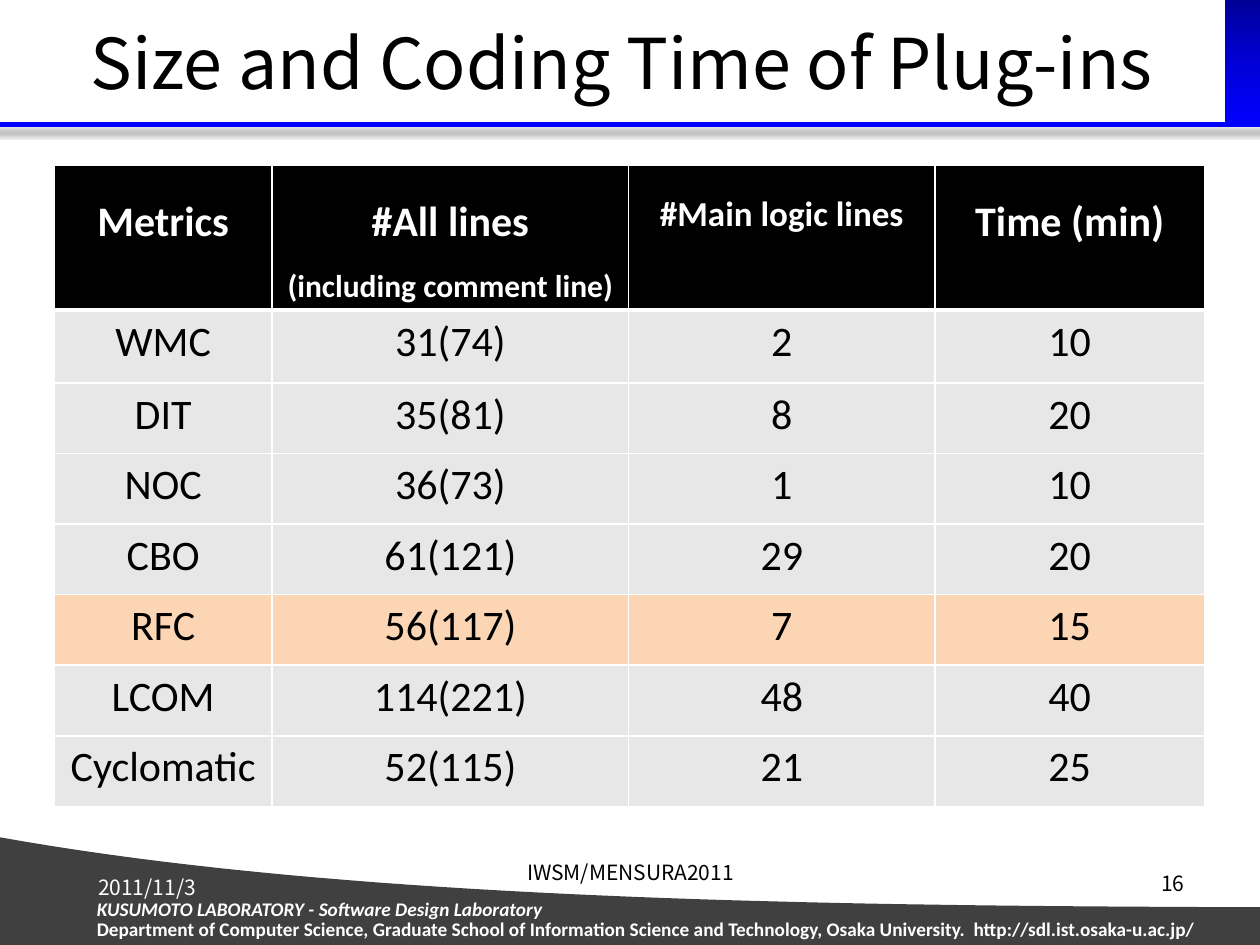
from copy import deepcopy

from lxml import etree
from pptx import Presentation
from pptx import util as u
from pptx.dml import color as c
from pptx.enum import shapes, text
from pptx.oxml import ns

BODY_FONT, TITLE_FONT = "Calibri", "Noto Sans CJK JP"
BLACK, WHITE, BLUE = "000000", "FFFFFF", "0000FF"
ALIGN, ANCHOR = text.PP_ALIGN, text.MSO_ANCHOR


def rgb(value):
    return c.RGBColor.from_string(value)


def style(paragraph, size, color, font, align=ALIGN.LEFT, bold=False, italic=False):
    paragraph.alignment = align
    for run in paragraph.runs:
        run.font.size, run.font.name = u.Pt(size), font
        run.font.bold, run.font.italic = bold, italic
        run.font.color.rgb = rgb(color)


presentation = Presentation()
presentation.slide_width, presentation.slide_height = u.Inches(10), u.Inches(7.5)
slide = presentation.slides.add_slide(presentation.slide_layouts[6])

# Footer wave: points along a cubic curve, closed along the bottom
start, control_1, control_2, end = (-0.03, 6.64), (2.79, 7.15), (6.64, 7.19), (10.02, 7.2)
wave = []
for step in range(41):
    t = step / 40
    weights = ((1 - t) ** 3, 3 * t * (1 - t) ** 2, 3 * t ** 2 * (1 - t), t ** 3)
    wave.append([u.Inches(sum(w * p for w, p in zip(weights, axis)))
                 for axis in zip(start, control_1, control_2, end)])
builder = slide.shapes.build_freeform(*wave[0], scale=1.0)
corners = [(u.Inches(x), u.Inches(y)) for x, y in ((10.02, 7.51), (-0.03, 7.53))]
builder.add_line_segments(wave[1:] + corners, close=True)
footer = builder.convert_to_shape()
footer.shadow.inherit = False
footer.fill.solid()
footer.fill.fore_color.rgb = rgb("404040")
footer.line.fill.background()

# Blue corner block and header rule
corner = slide.shapes.add_shape(shapes.MSO_SHAPE.RECTANGLE, u.Inches(9.72), 0,
                                u.Inches(0.28), u.Inches(0.99))
corner.shadow.inherit = False
corner.line.fill.background()
corner.fill.gradient()
corner.fill.gradient_angle = 270
stop_list = corner._element.spPr.find(".//" + ns.qn("a:gsLst"))
stop_list.append(deepcopy(stop_list[0]))
for stop, (position, color) in zip(corner.fill.gradient_stops,
                                   ((0, "000097"), (0.5, "0000D7"), (1, BLUE))):
    stop.position, stop.color.rgb = position, rgb(color)

rule = slide.shapes.add_connector(shapes.MSO_CONNECTOR.STRAIGHT, u.Inches(-0.12),
                                  u.Inches(0.99), u.Inches(10.12), u.Inches(0.99))
rule.line.color.rgb = rgb(BLUE)
rule.line.width = u.Pt(3)
effects = etree.SubElement(rule._element.spPr, ns.qn("a:effectLst"))
shadow = etree.SubElement(effects, ns.qn("a:outerShdw"), blurRad=str(u.Pt(4)),
                          dist=str(u.Pt(3)), dir="5400000", rotWithShape="0")
shadow_color = etree.SubElement(shadow, ns.qn("a:srgbClr"), val=BLACK)
etree.SubElement(shadow_color, ns.qn("a:alpha"), val="40000")

# Title and footer texts: words, box, anchor, wrap, line spacing, style
labels = [
    ("Department of Computer Science, Graduate School of Information Science and Technology, "
     "Osaka University.  http://sdl.ist.osaka-u.ac.jp/",
     (0.67, 7.22, 9.33, 0.29), ANCHOR.BOTTOM, True, None,
     (11, WHITE, BODY_FONT, ALIGN.LEFT, True)),
    ("KUSUMOTO LABORATORY - Software Design Laboratory",
     (0.67, 7.12, 3.79, 0.25), ANCHOR.TOP, False, u.Pt(10),
     (11, WHITE, BODY_FONT, ALIGN.LEFT, True, True)),
    ("Size and Coding Time of Plug-ins", (0.25, 0.05, 9.37, 0.87), ANCHOR.MIDDLE, True, None,
     (40, BLACK, TITLE_FONT, ALIGN.CENTER)),
    ("2011/11/3", (0.68, 6.89, 1.85, 0.24), ANCHOR.TOP, True, None,
     (12, WHITE, TITLE_FONT)),
    ("IWSM/MENSURA2011", (2.52, 6.72, 4.97, 0.41), ANCHOR.MIDDLE, True, None,
     (12, BLACK, TITLE_FONT, ALIGN.CENTER)),
    ("16", (7.6, 6.73, 1.9, 0.43), ANCHOR.BOTTOM, True, None,
     (12, BLACK, TITLE_FONT, ALIGN.RIGHT)),
]
for words, box, anchor, wrap, spacing, look in labels:
    frame = slide.shapes.add_textbox(*map(u.Inches, box)).text_frame
    frame.text = words
    frame.word_wrap, frame.vertical_anchor = wrap, anchor
    frame.paragraphs[0].line_spacing = spacing
    style(frame.paragraphs[0], *look)

# Metrics table
rows = [
    ("Metrics", "#All lines\n(including comment line)", "#Main logic lines", "Time (min)"),
    ("WMC", "31(74)", "2", "10"),
    ("DIT", "35(81)", "8", "20"),
    ("NOC", "36(73)", "1", "10"),
    ("CBO", "61(121)", "29", "20"),
    ("RFC", "56(117)", "7", "15"),
    ("LCOM", "114(221)", "48", "40"),
    ("Cyclomatic", "52(115)", "21", "25"),
]
small_headings = {"(including comment line)": 18, "#Main logic lines": 20}
table = slide.shapes.add_table(len(rows), 4, u.Inches(0.43), u.Inches(1.31),
                               u.Inches(9.13), u.Inches(5.08)).table
for column, width in zip(table.columns, (1.73, 2.83, 2.43, 2.14)):
    column.width = u.Inches(width)
for row, height in zip(table.rows, [1.14, 0.58] + [0.56] * 6):
    row.height = u.Inches(height)

for row_index, values in enumerate(rows):
    heading = row_index == 0
    fill = BLACK if heading else "FCD5B5" if values[0] == "RFC" else "E7E7E7"
    for column_index, value in enumerate(values):
        cell = table.cell(row_index, column_index)
        cell.text_frame.text = value
        for paragraph in cell.text_frame.paragraphs:
            style(paragraph, small_headings.get(paragraph.text, 24),
                  WHITE if heading else BLACK, BODY_FONT, ALIGN.CENTER, heading)
            if heading:
                paragraph.line_spacing = 1.5
        properties = cell._tc.get_or_add_tcPr()
        for side in ("lnL", "lnR", "lnT", "lnB"):
            thick = (row_index, side) in ((0, "lnB"), (1, "lnT"))
            border = etree.SubElement(properties, ns.qn("a:" + side),
                                      w=str(u.Pt(3 if thick else 1)))
            border_fill = etree.SubElement(border, ns.qn("a:solidFill"))
            etree.SubElement(border_fill, ns.qn("a:srgbClr"), val=WHITE)
        cell.fill.solid()
        cell.fill.fore_color.rgb = rgb(fill)

presentation.save("out.pptx")
